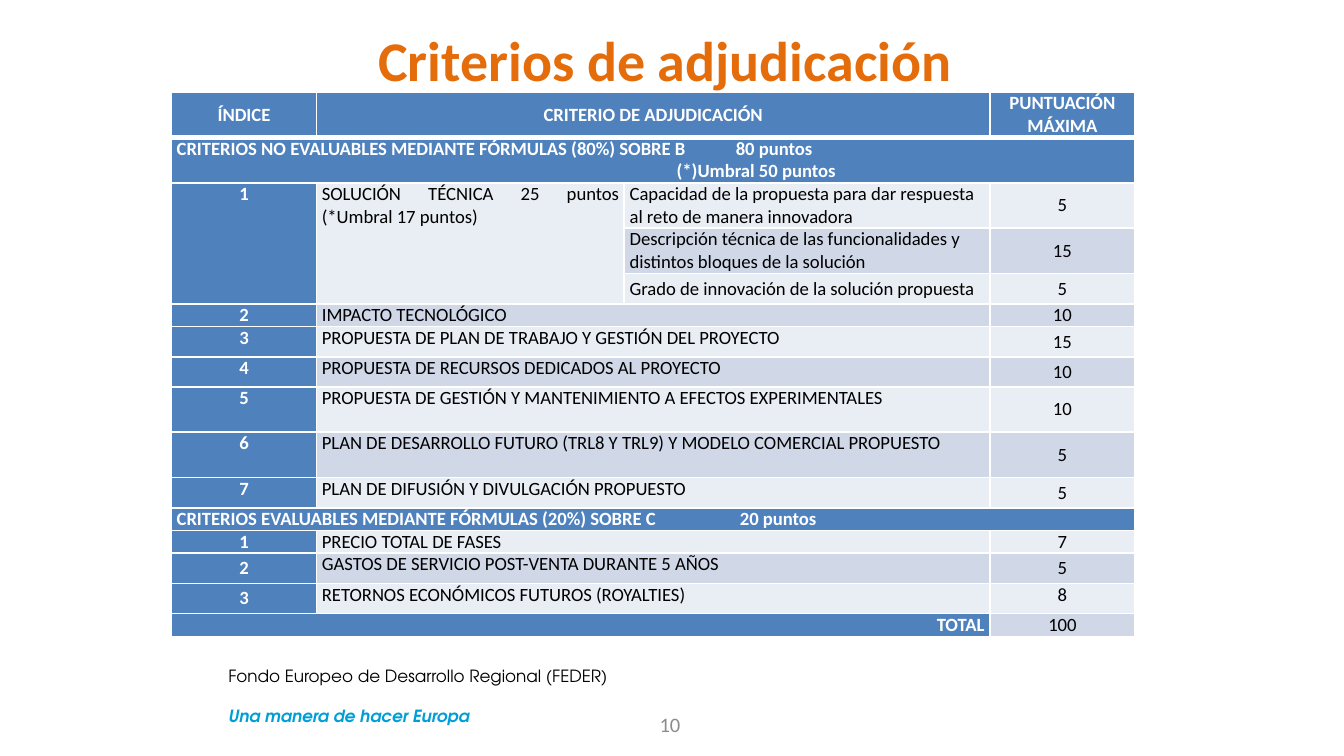
from typing import NamedTuple

from lxml.etree import SubElement
from pptx import Presentation
from pptx.dml.color import RGBColor
from pptx.enum.text import MSO_ANCHOR as ANC, PP_ALIGN as AL
from pptx.oxml.ns import qn
from pptx.util import Emu, Inches, Pt

ORANGE = RGBColor(0xE4, 0x6C, 0x0A)
BLUE = RGBColor(0x4F, 0x81, 0xBD)
LIGHT = RGBColor(0xE9, 0xED, 0xF4)
DARK = RGBColor(0xD0, 0xD8, 0xE8)
WHITE = RGBColor(0xFF, 0xFF, 0xFF)
BLACK = RGBColor(0, 0, 0)
GREY = RGBColor(0x8C, 0x8C, 0x8C)
CYAN = RGBColor(0x00, 0x9E, 0xD6)

# Widescreen slide, 16:9
prs = Presentation()
prs.slide_width = Inches(10)
prs.slide_height = Emu(prs.slide_width * 9 // 16)


class Box(NamedTuple):
    """Left, top, width and height in percent of the slide."""
    x: float
    y: float
    w: float
    h: float


class Cell(NamedTuple):
    row: int
    col: int
    text: str
    align: AL = AL.CENTER
    anchor: ANC = ANC.MIDDLE
    blue: bool = False
    rows: int = 1
    cols: int = 1


class Criterion(NamedTuple):
    row: int
    index: str
    name: str
    points: str
    index_anchor: ANC = ANC.TOP
    points_anchor: ANC = ANC.MIDDLE


def across(pct: float) -> Emu:
    return Emu(int(prs.slide_width * pct / 100))


def down(pct: float) -> Emu:
    return Emu(int(prs.slide_height * pct / 100))


def place(s, box: Box) -> None:
    s.left, s.top, s.width, s.height = across(box.x), down(box.y), across(box.w), down(box.h)


def write(p, text: str, color: RGBColor, align: AL = AL.LEFT, **fmt) -> None:
    p.alignment = align
    r = p.add_run()
    r.text = text
    r.font.color.rgb = color
    for name, value in {"name": "Calibri", "size": Pt(10), **fmt}.items():
        setattr(r.font, name, value)


def add_text(box: Box):
    s = slide.shapes.add_textbox(0, 0, 0, 0)
    place(s, box)
    s.text_frame.word_wrap = True
    s.text_frame.vertical_anchor = ANC.MIDDLE
    return s.text_frame


def set_borders(cell, **widths: float) -> None:
    tcPr = cell._tc.get_or_add_tcPr()
    for side in "LRTB":
        ln = SubElement(tcPr, qn(f"a:ln{side}"), w=str(Pt(widths.get(side, 1))))
        SubElement(SubElement(ln, qn("a:solidFill")), qn("a:srgbClr"), val=str(WHITE))


def fill_cell(c: Cell) -> None:
    cell = table.cell(c.row, c.col)
    if c.rows * c.cols > 1:
        cell.merge(table.cell(c.row + c.rows - 1, c.col + c.cols - 1))
    cell.vertical_anchor = c.anchor
    if c.blue:
        cell.fill.solid()
        cell.fill.fore_color.rgb = BLUE
    write(cell.text_frame.paragraphs[0], c.text, WHITE if c.blue else BLACK, c.align, bold=c.blue)


def add_tab(p, pct: float) -> None:
    tabs = SubElement(p._p.get_or_add_pPr(), qn("a:tabLst"))
    SubElement(tabs, qn("a:tab"), pos=str(across(pct)), algn="l")


# Title
slide = prs.slides.add_slide(prs.slide_layouts[5])
title = slide.shapes.title
place(title, Box(15.75, 2.5, 67.5, 10.3))
title.text_frame.vertical_anchor = ANC.TOP
write(title.text_frame.paragraphs[0], "Criterios de adjudicación", ORANGE, AL.CENTER,
      size=Pt(30), bold=True)

# Table grid: column widths and row heights in percent of the slide
COLS = [10.8, 22.9, 27.2, 10.8]
ROWS = [6, 6, 6, 6, 4, 3, 4, 4, 6, 6, 4, 3, 3, 4, 4, 3]
frame = slide.shapes.add_table(len(ROWS), len(COLS), across(12.75), down(12.2),
                               across(sum(COLS)), down(sum(ROWS)))
table = frame.table
for column, width in zip(table.columns, COLS):
    column.width = across(width)
for i, (row, height) in enumerate(zip(table.rows, ROWS)):
    row.height = down(height)
    for cell in row.cells:
        set_borders(cell, T=3 if i == 1 else 1, B=3 if i == 0 else 1)
        cell.fill.solid()
        cell.fill.fore_color.rgb = DARK if i % 2 else LIGHT
        cell.margin_left = cell.margin_right = Inches(0.04)
        cell.margin_top = cell.margin_bottom = 0

# Header, section bands, first criterion with its parts, and total
CELLS = [
    Cell(0, 0, "ÍNDICE", blue=True),
    Cell(0, 1, "CRITERIO DE ADJUDICACIÓN", blue=True, cols=2),
    Cell(0, 3, "PUNTUACIÓN MÁXIMA", blue=True),
    Cell(1, 0, "CRITERIOS NO EVALUABLES MEDIANTE FÓRMULAS (80%) SOBRE B\t80 puntos",
         AL.LEFT, ANC.TOP, True, cols=4),
    Cell(2, 0, "1", anchor=ANC.TOP, blue=True, rows=3),
    Cell(2, 1, "SOLUCIÓN TÉCNICA 25 puntos (*Umbral 17 puntos)", AL.JUSTIFY, ANC.TOP, rows=3),
    Cell(2, 2, "Capacidad de la propuesta para dar respuesta al reto de manera innovadora", AL.LEFT),
    Cell(2, 3, "5"),
    Cell(3, 2, "Descripción técnica de las funcionalidades y distintos bloques de la solución", AL.LEFT),
    Cell(3, 3, "15"),
    Cell(4, 2, "Grado de innovación de la solución propuesta", AL.LEFT),
    Cell(4, 3, "5"),
    Cell(11, 0, "CRITERIOS EVALUABLES MEDIANTE FÓRMULAS (20%) SOBRE C\t20 puntos",
         AL.LEFT, ANC.TOP, True, cols=4),
    Cell(15, 0, "TOTAL", AL.RIGHT, blue=True, cols=3),
    Cell(15, 3, "100"),
]
# Band tab stops, and the indented threshold line
for row, stop in ((1, 41.6), (11, 41.9)):
    add_tab(table.cell(row, 0).text_frame.paragraphs[0], stop)
for c in CELLS:
    fill_cell(c)
p = table.cell(1, 0).text_frame.add_paragraph()
p._p.get_or_add_pPr().set("marL", str(across(37.2)))
write(p, "(*)Umbral 50 puntos", WHITE, bold=True)

# Single-row criteria
CRITERIA = [
    Criterion(5, "2", "IMPACTO TECNOLÓGICO", "10"),
    Criterion(6, "3", "PROPUESTA DE PLAN DE TRABAJO Y GESTIÓN DEL PROYECTO", "15"),
    Criterion(7, "4", "PROPUESTA DE RECURSOS DEDICADOS AL PROYECTO", "10"),
    Criterion(8, "5", "PROPUESTA DE GESTIÓN Y MANTENIMIENTO A EFECTOS EXPERIMENTALES", "10"),
    Criterion(9, "6", "PLAN DE DESARROLLO FUTURO (TRL8 Y TRL9) Y MODELO COMERCIAL PROPUESTO", "5"),
    Criterion(10, "7", "PLAN DE DIFUSIÓN Y DIVULGACIÓN PROPUESTO", "5"),
    Criterion(12, "1", "PRECIO TOTAL DE FASES", "7", ANC.MIDDLE, ANC.TOP),
    Criterion(13, "2", "GASTOS DE SERVICIO POST-VENTA DURANTE 5 AÑOS", "5", ANC.MIDDLE),
    Criterion(14, "3", "RETORNOS ECONÓMICOS FUTUROS (ROYALTIES)", "8", ANC.MIDDLE, ANC.TOP),
]
for k in CRITERIA:
    fill_cell(Cell(k.row, 0, k.index, anchor=k.index_anchor, blue=True))
    fill_cell(Cell(k.row, 1, k.name, AL.JUSTIFY, ANC.TOP, cols=2))
    fill_cell(Cell(k.row, 3, k.points, anchor=k.points_anchor))

# Footer and slide number
tf = add_text(Box(16, 88.5, 32.5, 7.1))
FOOTER = {"name": "TeX Gyre Adventor", "size": Pt(9)}
write(tf.paragraphs[0], "Fondo Europeo de Desarrollo Regional (FEDER)", BLACK, **FOOTER)
p = tf.add_paragraph()
p.space_before = Pt(10.5)
write(p, "Una manera de hacer Europa", CYAN, bold=True, italic=True, **FOOTER)
tf = add_text(Box(47.1, 93.2, 5.5, 5.3))
write(tf.paragraphs[0], "10", GREY, AL.CENTER, size=Pt(11))

prs.save("out.pptx")
